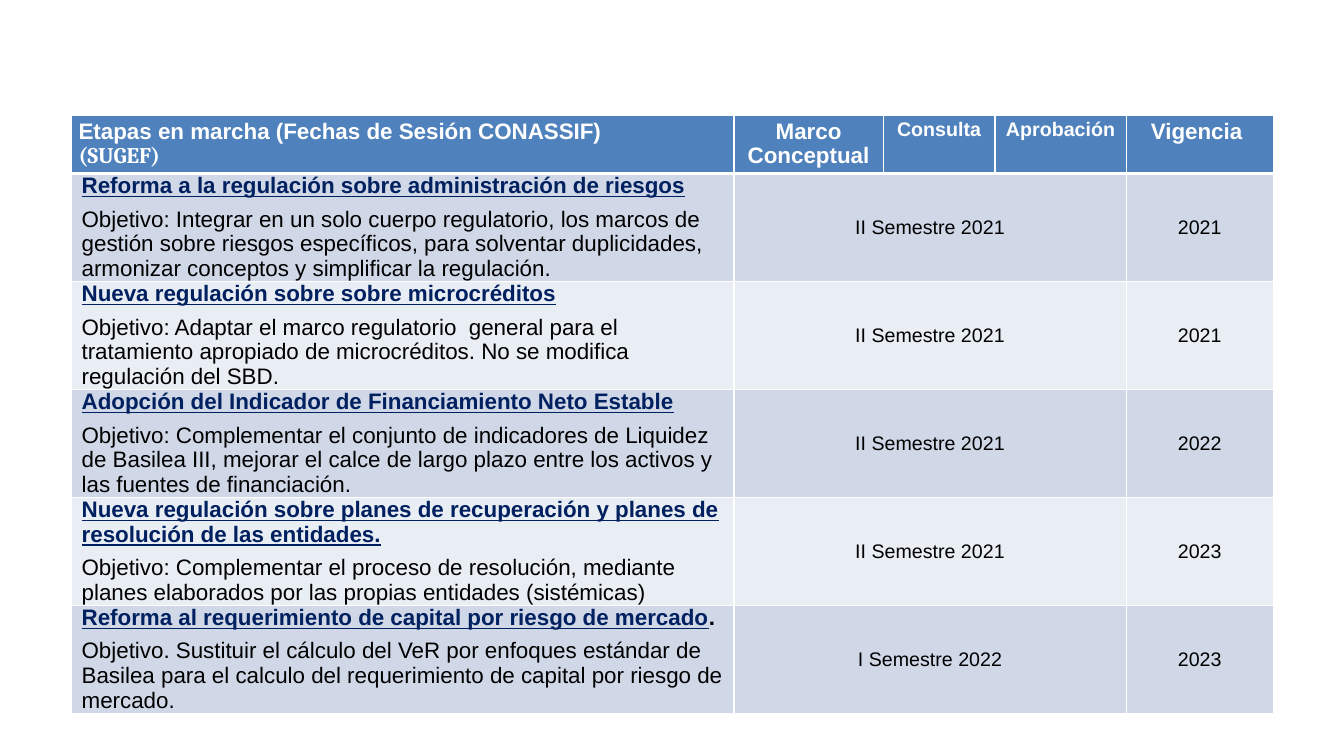
import pptx
import pptx.dml.color
import pptx.enum.text
import pptx.oxml
import pptx.oxml.ns
import pptx.util
from dataclasses import dataclass

Inches = pptx.util.Inches
Pt = pptx.util.Pt
ALIGN = pptx.enum.text.PP_ALIGN
ANCHOR = pptx.enum.text.MSO_ANCHOR


@dataclass(frozen=True)
class Theme:
    header_fill: str = "4F81BD"
    bands: tuple = ("D0D8E8", "E9EDF4")
    white: str = "FFFFFF"
    navy: str = "002060"
    black: str = "000000"
    font: str = "Arial"
    accent_font: str = "Cambria"
    large: int = 16
    small: int = 14
    thin: int = 1
    thick: int = 3


COLUMNS = (6.57, 1.48, 1.11, 1.3, 1.46)
HEADER_HEIGHT = 0.58
STAGE_HEIGHT = 1.07

# Each stage: title, title ending, objective, session date, year in force
STAGES = (
    ("Reforma a la regulación sobre administración de riesgos", "",
     "Objetivo: Integrar en un solo cuerpo regulatorio, los marcos de gestión sobre riesgos "
     "específicos, para solventar duplicidades, armonizar conceptos y simplificar la regulación.",
     "II Semestre 2021", "2021"),
    ("Nueva regulación sobre sobre microcréditos", "",
     "Objetivo: Adaptar el marco regulatorio  general para el tratamiento apropiado de "
     "microcréditos. No se modifica regulación del SBD.",
     "II Semestre 2021", "2021"),
    ("Adopción del Indicador de Financiamiento Neto Estable", "",
     "Objetivo: Complementar el conjunto de indicadores de Liquidez de Basilea III, mejorar el "
     "calce de largo plazo entre los activos y las fuentes de financiación.",
     "II Semestre 2021", "2022"),
    ("Nueva regulación sobre planes de recuperación y planes de resolución de las entidades.", "",
     "Objetivo: Complementar el proceso de resolución, mediante planes elaborados por las "
     "propias entidades (sistémicas)",
     "II Semestre 2021", "2023"),
    ("Reforma al requerimiento de capital por riesgo de mercado", ".",
     "Objetivo. Sustituir el cálculo del VeR por enfoques estándar de Basilea para el calculo "
     "del requerimiento de capital por riesgo de mercado.",
     "I Semestre 2022", "2023"),
)


class SlideBuilder:
    def __init__(self, slide, theme):
        self.slide = slide
        self.theme = theme

    def span(self, text, size=None, color=None, bold=False, underline=False, font=None):
        """Describe one run of text."""
        theme = self.theme
        return (text, size or theme.large, color or theme.black, bold, underline,
                font or theme.font)

    def add_table(self, left, top, columns, heights):
        frame = self.slide.shapes.add_table(
            len(heights), len(columns), Inches(left), Inches(top),
            Inches(sum(columns)), Inches(sum(heights)))
        table = frame.table
        table.horz_banding = False
        for column, width in zip(table.columns, columns):
            column.width = Inches(width)
        for row, height in zip(table.rows, heights):
            row.height = Inches(height)
        return table

    def style_cell(self, cell, fill, top, bottom):
        properties = cell._tc.get_or_add_tcPr()
        thin = self.theme.thin
        for side, width in (("L", thin), ("R", thin), ("T", top), ("B", bottom)):
            properties.append(pptx.oxml.parse_xml(
                f'<a:ln{side} {pptx.oxml.ns.nsdecls("a")} w="{Pt(width)}"><a:solidFill>'
                f'<a:srgbClr val="{self.theme.white}"/></a:solidFill></a:ln{side}>'))
        cell.fill.solid()
        cell.fill.fore_color.rgb = pptx.dml.color.RGBColor.from_string(fill)

    def fill_cell(self, cell, paragraphs, align=ALIGN.LEFT, anchor=ANCHOR.TOP,
                  inset=(0.07, 0.04), indent=0, gap=0):
        cell.margin_left = cell.margin_right = Inches(inset[0])
        cell.margin_top = cell.margin_bottom = Inches(inset[1])
        cell.vertical_anchor = anchor
        for index, spans in enumerate(paragraphs):
            para = cell.text_frame.paragraphs[0] if index == 0 else cell.text_frame.add_paragraph()
            para.alignment = align
            para.space_before = Pt(gap if index else 0)
            if indent:
                para._p.get_or_add_pPr().set("marL", str(Inches(indent)))
            for text, size, color, bold, underline, font in spans:
                run = para.add_run()
                run.text = text
                run.font.size = Pt(size)
                run.font.name = font
                run.font.bold = bold
                run.font.underline = underline
                run.font.color.rgb = pptx.dml.color.RGBColor.from_string(color)


def main():
    deck = pptx.Presentation()
    deck.slide_width, deck.slide_height = Inches(13.33), Inches(7.5)
    theme = Theme()
    page = SlideBuilder(deck.slides.add_slide(deck.slide_layouts[6]), theme)
    table = page.add_table(0.71, 1.14, COLUMNS,
                           [HEADER_HEIGHT] + [STAGE_HEIGHT] * len(STAGES))

    # Fills and borders, with a heavy rule under the header
    for row in range(len(STAGES) + 1):
        fill = theme.bands[(row - 1) % 2] if row else theme.header_fill
        top = theme.thick if row == 1 else theme.thin
        bottom = theme.thick if row == 0 else theme.thin
        for column in range(len(COLUMNS)):
            page.style_cell(table.cell(row, column), fill, top, bottom)

    # Header row
    def heading(text, size=theme.large, font=theme.font):
        return [page.span(text, size, theme.white, True, font=font)]

    page.fill_cell(table.cell(0, 0), [
        heading("Etapas en marcha (Fechas de Sesión CONASSIF)"),
        heading("(SUGEF)", font=theme.accent_font)])
    headings = (
        [heading("Marco"), heading("Conceptual")],
        [heading("Consulta", theme.small)],
        [heading("Aprobación", theme.small)],
        [heading("Vigencia ")],
    )
    for column, paragraphs in enumerate(headings, start=1):
        page.fill_cell(table.cell(0, column), paragraphs, ALIGN.CENTER)

    # One row per regulatory stage
    for row, (title, ending, objective, session, year) in enumerate(STAGES, start=1):
        title_spans = [page.span(title, color=theme.navy, bold=True, underline=True)]
        if ending:
            title_spans.append(page.span(ending, bold=True))
        page.fill_cell(table.cell(row, 0), [title_spans, [page.span(objective)]],
                       inset=(0, 0), indent=0.1, gap=6)
        table.cell(row, 1).merge(table.cell(row, 3))
        for column, text in ((1, session), (4, year)):
            page.fill_cell(table.cell(row, column), [[page.span(text, theme.small)]],
                           ALIGN.CENTER, ANCHOR.MIDDLE)

    deck.save("out.pptx")


if __name__ == "__main__":
    main()
